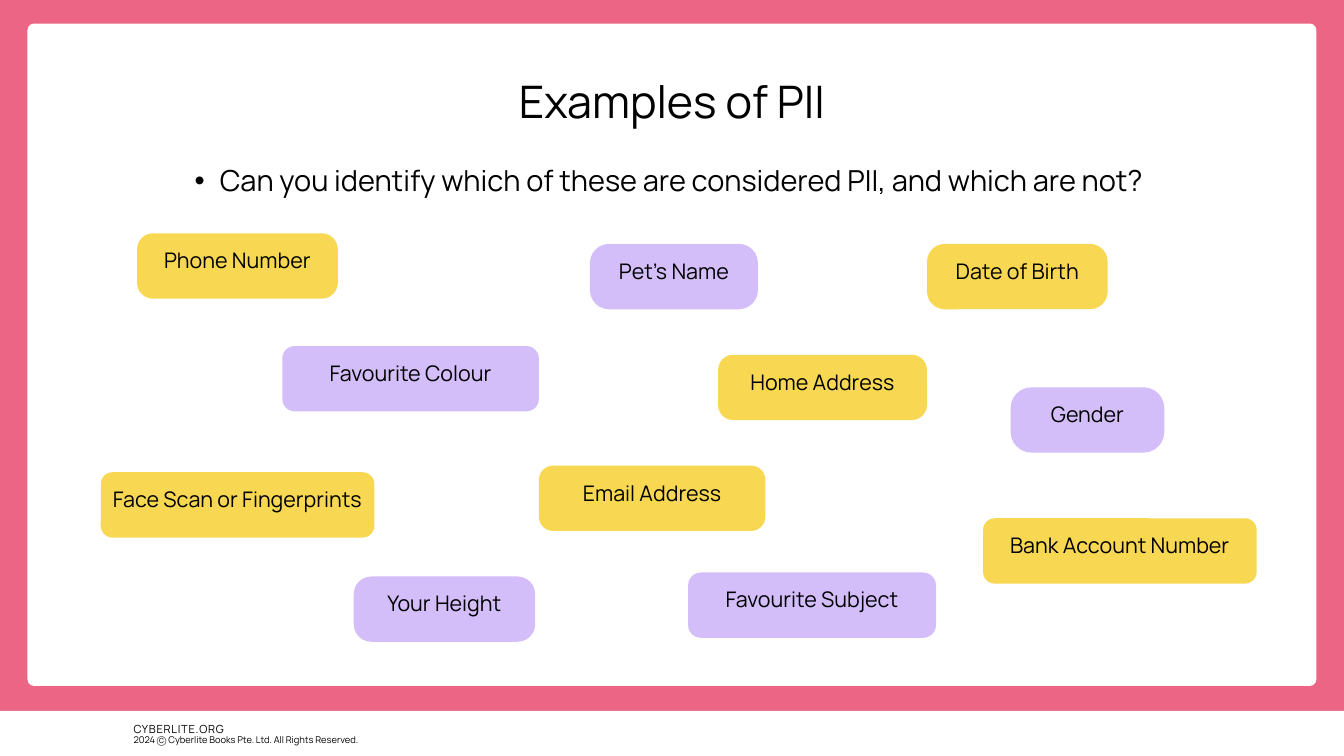
from pptx import Presentation
from pptx import util as u
from pptx.dml.color import RGBColor
from pptx.enum import shapes, text
from pptx.oxml.ns import qn
from lxml import etree

COLOURS = {
    "pink": "EC6585",
    "white": "FFFFFF",
    "black": "000000",
    "yellow": "F8D853",
    "lilac": "D4BEFA",
}
FONT = "Manrope"
LINE_FACTOR = 1.4  # line spacing relative to text size
CARD_HEIGHT = 2.47

# label, left, top, width in cm
PERSONAL = [
    ("Phone Number", 5.18, 8.82, 7.59),
    ("Home Address", 27.14, 13.41, 7.9),
    ("Date of Birth", 35.04, 9.22, 6.83),
    ("Bank Account Number", 37.16, 19.59, 10.34),
    ("Email Address", 20.37, 17.6, 8.56),
    ("Face Scan or Fingerprints", 3.81, 17.85, 10.34),
]
NOT_PERSONAL = [
    ("Pet’s Name", 22.3, 9.22, 6.35),
    ("Favourite Subject", 26.01, 21.64, 9.37),
    ("Favourite Colour", 10.67, 13.08, 9.7),
    ("Your Height", 13.37, 21.79, 6.86),
    ("Gender", 38.2, 14.64, 5.81),
]


def paint(fill, colour):
    fill.solid()
    fill.fore_color.rgb = RGBColor.from_string(COLOURS[colour])


def set_insets(frame, left=0, top=0, right=0, bottom=0):
    frame.margin_left, frame.margin_top = u.Cm(left), u.Cm(top)
    frame.margin_right, frame.margin_bottom = u.Cm(right), u.Cm(bottom)


def write(frame, words, size, align=text.PP_ALIGN.CENTER):
    frame.text = words
    frame.word_wrap = True
    paragraph = frame.paragraphs[0]
    paragraph.alignment = align
    paragraph.line_spacing = u.Pt(round(size * LINE_FACTOR, 1))
    paragraph.font.size = u.Pt(size)
    paragraph.font.name = FONT
    paragraph.font.color.rgb = RGBColor.from_string(COLOURS["black"])
    return paragraph


def add_block(slide, kind, box, colour):
    block = slide.shapes.add_shape(kind, *map(u.Cm, box))
    block.shadow.inherit = False
    paint(block.fill, colour)
    block.line.fill.background()
    return block


def add_card(slide, label, left, top, width, colour):
    card = add_block(slide, shapes.MSO_SHAPE.ROUNDED_RECTANGLE,
                     (left, top, width, CARD_HEIGHT), colour)
    card.adjustments[0] = 1.85 / width  # wider cards have tighter corners
    frame = card.text_frame
    set_insets(frame, left=0.15, right=0.15, bottom=0.6)
    frame.vertical_anchor = text.MSO_ANCHOR.MIDDLE
    write(frame, label, 23)


def add_footer_line(slide, words, box, size):
    frame = slide.shapes.add_textbox(*map(u.Cm, box)).text_frame
    set_insets(frame)
    return write(frame, words, size, text.PP_ALIGN.LEFT)


def fill_placeholder(slide, placeholder, words, box, size):
    # Bring in front of the panel
    slide.shapes._spTree.append(placeholder._element)
    placeholder.left, placeholder.top, placeholder.width, placeholder.height = map(u.Cm, box)
    frame = placeholder.text_frame
    set_insets(frame)
    frame.auto_size = text.MSO_AUTO_SIZE.NONE
    frame.vertical_anchor = text.MSO_ANCHOR.TOP
    properties = frame.paragraphs[0]._p.get_or_add_pPr()
    properties.set("marL", "0")
    properties.set("indent", "0")
    etree.SubElement(properties, qn("a:buNone"))
    write(frame, words, size).space_before = u.Pt(0)


def main():
    deck = Presentation()
    deck.slide_width, deck.slide_height = u.Cm(50.8), u.Cm(28.575)
    slide = deck.slides.add_slide(deck.slide_layouts[1])
    paint(slide.background.fill, "pink")

    # Footer
    add_block(slide, shapes.MSO_SHAPE.RECTANGLE, (0, 26.87, 50.8, 1.7), "white")
    site = add_footer_line(slide, "CYBERLITE.ORG", (5.05, 27.23, 4.7, 0.58), 12)
    site.runs[0]._r.get_or_add_rPr().set("spc", "80")
    add_footer_line(slide, "2024 Ⓒ Cyberlite Books Pte. Ltd. All Rights Reserved.",
                    (5.05, 27.69, 11.76, 0.48), 10)

    # Panel with title and question
    panel = add_block(slide, shapes.MSO_SHAPE.ROUNDED_RECTANGLE,
                      (1.04, 0.89, 48.72, 25.04), "white")
    panel.adjustments[0] = 0.01
    fill_placeholder(slide, slide.shapes.title, "Examples of PII",
                     (5.18, 2.46, 40.44, 2.41), 48)
    fill_placeholder(slide, slide.placeholders[1],
                     "Can you identify which of these are considered PII, and which are not?",
                     (2.83, 5.94, 44.88, 1.55), 31)

    # Cards
    for colour, cards in (("yellow", PERSONAL), ("lilac", NOT_PERSONAL)):
        for card in cards:
            add_card(slide, *card, colour)

    deck.save("out.pptx")


if __name__ == "__main__":
    main()
